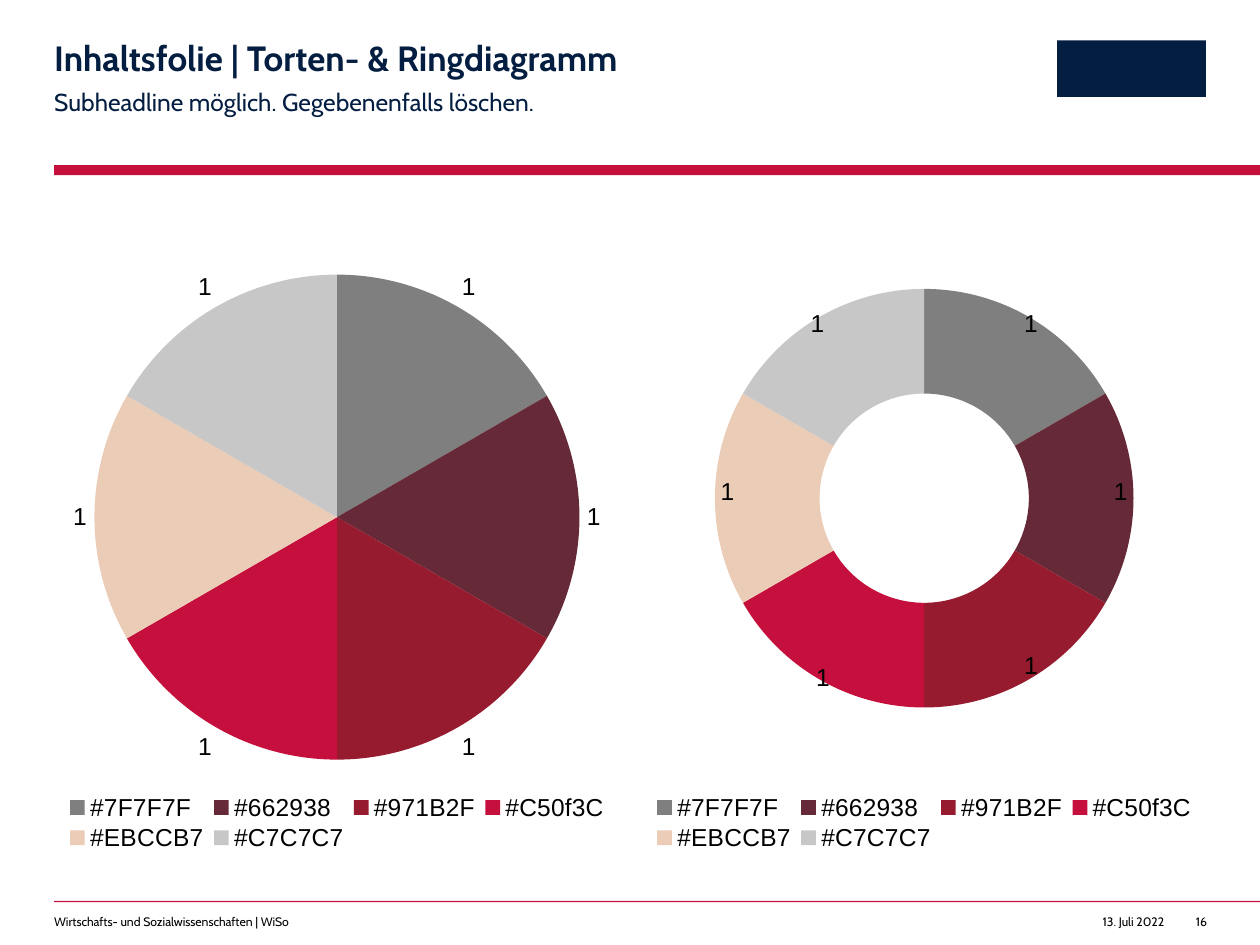
from lxml.etree import SubElement
from pptx import Presentation
from pptx.chart.data import CategoryChartData
from pptx.dml.color import RGBColor
from pptx.enum.chart import XL_CHART_TYPE, XL_LABEL_POSITION, XL_LEGEND_POSITION
from pptx.enum.shapes import MSO_SHAPE
from pptx.enum.text import PP_ALIGN
from pptx.oxml.ns import qn
from pptx.util import Inches, Pt

BLACK = RGBColor(0x00, 0x00, 0x00)
WHITE = RGBColor(0xFF, 0xFF, 0xFF)
NAVY = RGBColor(0x04, 0x1E, 0x42)
RED = RGBColor(0xC5, 0x0F, 0x3C)

SLICES = {
    "#7F7F7F": RGBColor(0x7F, 0x7F, 0x7F),
    "#662938": RGBColor(0x66, 0x29, 0x38),
    "#971B2F": RGBColor(0x97, 0x1B, 0x2F),
    "#C50f3C": RED,
    "#EBCCB7": RGBColor(0xEB, 0xCC, 0xB7),
    "#C7C7C7": RGBColor(0xC7, 0xC7, 0xC7),
}
PIE_AREA = {"x": 0.07, "y": 0.08, "w": 0.86, "h": 0.77}
RING_AREA = {"x": 0.13, "y": 0.1, "w": 0.74, "h": 0.67}
LEGEND_AREA = {"x": 0.01, "y": 0.9, "w": 0.98, "h": 0.1}
RING_LABEL_SHIFTS = [(0.05, -0.06), (0.07, -0.01), (0.05, 0.05),
                     (-0.04, 0.07), (-0.07, -0.01), (-0.05, -0.06)]
LEFT = 0.43
CHART_LEFTS = (LEFT, 5.09)


def manual_layout(parent, index, values, edge=True, inner=False):
    """Give a chart part a manual layout, as fractions of the chart."""
    for old in parent.findall(qn("c:layout")):
        parent.remove(old)
    layout = SubElement(parent, qn("c:layout"))
    parent.insert(index, layout)
    manual = SubElement(layout, qn("c:manualLayout"))
    if inner:
        SubElement(manual, qn("c:layoutTarget")).set("val", "inner")
    if edge:
        for mode in ("xMode", "yMode"):
            SubElement(manual, qn(f"c:{mode}")).set("val", "edge")
    for name, value in values.items():
        SubElement(manual, qn(f"c:{name}")).set("val", str(value))


class SlideBuilder:
    text_font = "Cabin"
    chart_font = "Arial"

    def __init__(self, slide):
        self.slide = slide

    def bar(self, left, top, width, height, color):
        shape = self.slide.shapes.add_shape(
            MSO_SHAPE.RECTANGLE, Inches(left), Inches(top), Inches(width), Inches(height))
        shape.shadow.inherit = False
        shape.fill.solid()
        shape.fill.fore_color.rgb = color
        shape.line.fill.background()

    def text(self, left, top, width, height, words, size, color=BLACK, bold=False,
             align=PP_ALIGN.LEFT, wrap=True, line_spacing=1.0):
        box = self.slide.shapes.add_textbox(
            Inches(left), Inches(top), Inches(width), Inches(height))
        frame = box.text_frame
        frame.margin_left = frame.margin_right = frame.margin_top = frame.margin_bottom = 0
        frame.word_wrap = wrap
        frame.text = words
        para = frame.paragraphs[0]
        para.alignment = align
        para.line_spacing = line_spacing
        self.style(para.runs[0].font, self.text_font, size, color, bold)

    def style(self, font, name, size, color=BLACK, bold=False):
        font.name = name
        font.size = Pt(size)
        font.color.rgb = color
        font.bold = bold

    def chart(self, kind, left, plot_area):
        """Add a chart with equal coloured slices, value labels and a legend."""
        data = CategoryChartData()
        data.categories = list(SLICES)
        data.add_series("Series 1", [1] * len(SLICES))
        chart = self.slide.shapes.add_chart(
            kind, Inches(left), Inches(1.78), Inches(4.49), Inches(5), data).chart
        chart.has_title = False
        self.style(chart.font, self.chart_font, 10)
        chart.has_legend = True
        chart.legend.position = XL_LEGEND_POSITION.BOTTOM
        chart.legend.include_in_layout = False
        self.style(chart.legend.font, self.chart_font, 14)
        space = chart._chartSpace
        manual_layout(next(space.iter(qn("c:legend"))), 1, LEGEND_AREA)
        manual_layout(next(space.iter(qn("c:plotArea"))), 0, plot_area, inner=True)

        plot = chart.plots[0]
        plot.vary_by_categories = True
        series = plot.series[0]
        for index, color in enumerate(SLICES.values()):
            fill = series.points[index].format.fill
            fill.solid()
            fill.fore_color.rgb = color
        series.data_labels.show_value = True
        self.style(series.data_labels.font, self.chart_font, 14)
        return chart

    def pie(self, left):
        chart = self.chart(XL_CHART_TYPE.PIE, left, PIE_AREA)
        chart.plots[0].series[0].data_labels.position = XL_LABEL_POSITION.OUTSIDE_END

    def ring(self, left):
        chart = self.chart(XL_CHART_TYPE.DOUGHNUT, left, RING_AREA)
        series = chart.plots[0].series[0]
        for index in range(len(SLICES)):
            self.style(series.points[index].data_label.font, self.chart_font, 14)
        labels = series._element.iter(qn("c:dLbl"))
        for label, (x, y) in zip(list(labels), RING_LABEL_SHIFTS):
            manual_layout(label, 1, {"x": x, "y": y}, edge=False)
        next(chart._chartSpace.iter(qn("c:holeSize"))).set("val", "80")


def main():
    deck = Presentation()
    deck.slide_width = Inches(10)
    deck.slide_height = Inches(7.5)
    page = deck.slides.add_slide(deck.slide_layouts[6])
    page.background.fill.solid()
    page.background.fill.fore_color.rgb = WHITE

    builder = SlideBuilder(page)
    builder.bar(LEFT, 1.31, 10 - LEFT, 0.08, RED)
    builder.bar(LEFT, 7.15, 10 - LEFT, 0.01, RED)
    builder.bar(8.39, 0.32, 1.18, 0.45, NAVY)

    builder.text(8.65, 7.26, 0.59, 0.12, "13. Juli 2022", 7,
                 align=PP_ALIGN.RIGHT, wrap=False)
    builder.text(LEFT, 7.26, 4.49, 0.12, "Wirtschafts- und Sozialwissenschaften | WiSo", 7)
    builder.text(9.41, 7.26, 0.17, 0.1, "16", 7, align=PP_ALIGN.RIGHT, wrap=False)
    builder.text(LEFT, 0.33, 5.61, 0.3, "Inhaltsfolie | Torten- & Ringdiagramm", 20,
                 NAVY, bold=True, line_spacing=0.9)
    builder.text(LEFT, 0.67, 5.61, 0.24, "Subheadline möglich. Gegebenenfalls löschen.", 14,
                 NAVY, line_spacing=1.1)

    builder.pie(CHART_LEFTS[0])
    builder.ring(CHART_LEFTS[1])
    deck.save("out.pptx")


if __name__ == "__main__":
    main()
